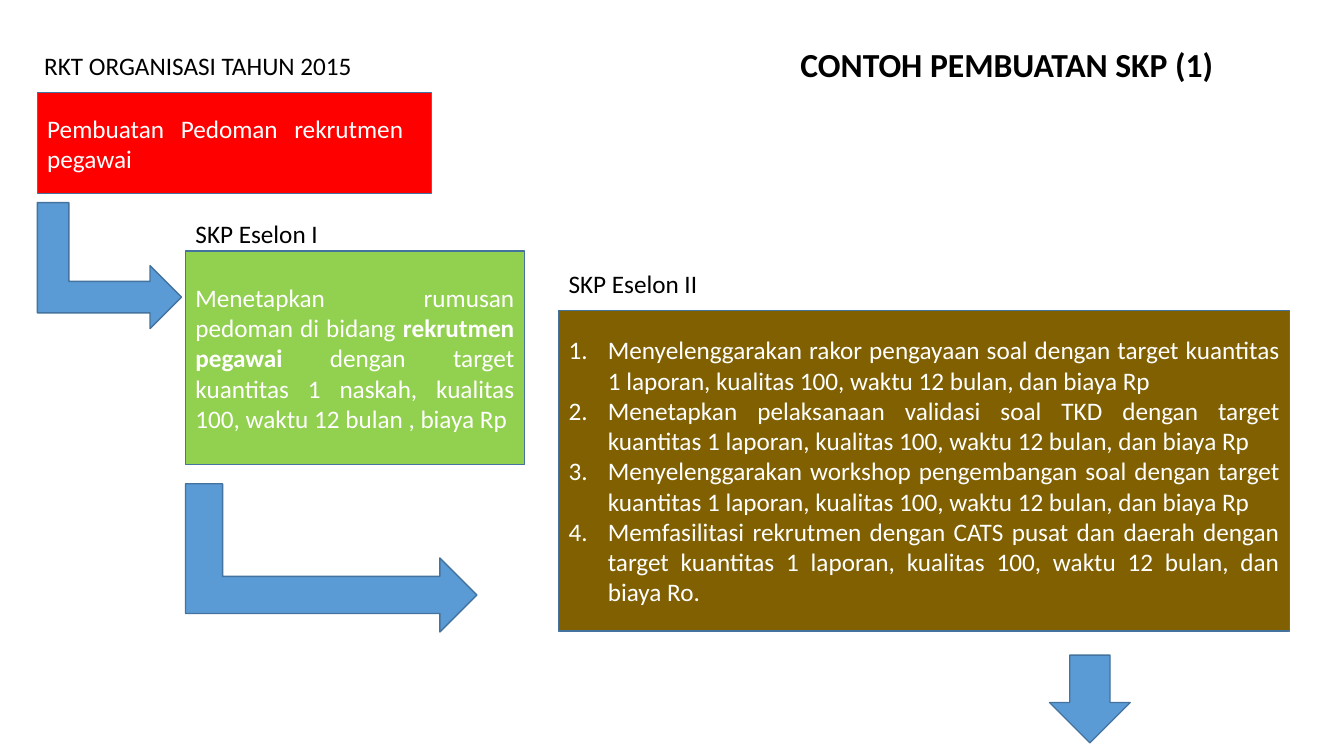
from lxml import etree
from pptx import Presentation
from pptx import util as u
from pptx.dml.color import RGBColor
from pptx.enum import shapes, text
from pptx.oxml.ns import qn

I = u.Inches
SHAPE = shapes.MSO_SHAPE
BLUE = "5B9BD5"
OUTLINE = "43739E"
TARGET = "target kuantitas 1 laporan, kualitas 100, waktu 12 bulan, dan biaya"
TASKS = [
    f"Menyelenggarakan rakor pengayaan soal dengan {TARGET} Rp",
    f"Menetapkan pelaksanaan validasi soal TKD dengan {TARGET} Rp",
    f"Menyelenggarakan workshop pengembangan soal dengan {TARGET} Rp",
    f"Memfasilitasi rekrutmen dengan CATS pusat dan daerah dengan {TARGET} Ro.",
]


def rgb(value):
    return RGBColor.from_string(value)


def add_run(p, content, size=18, color="000000", bold=False):
    r = p.add_run()
    r.text = content
    r.font.name = "Calibri"
    r.font.size = u.Pt(size)
    r.font.bold = bold
    r.font.color.rgb = rgb(color)


def number(p, indent=0.39):
    pPr = p._p.get_or_add_pPr()
    pPr.set("marL", str(I(indent)))
    pPr.set("indent", str(-I(indent)))
    etree.SubElement(pPr, qn("a:buFont"), typeface="+mj-lt")
    etree.SubElement(pPr, qn("a:buAutoNum"), type="arabicPeriod")


def add_label(s, box, content, **fmt):
    tf = s.shapes.add_textbox(*map(I, box)).text_frame
    tf.word_wrap = True
    add_run(tf.paragraphs[0], content, **fmt)


def add_figure(s, kind, box, fill, rotation=0):
    sp = s.shapes.add_shape(kind, *map(I, box))
    sp.shadow.inherit = False
    sp.rotation = rotation
    sp.fill.solid()
    sp.fill.fore_color.rgb = rgb(fill)
    sp.line.color.rgb = rgb(OUTLINE)
    sp.line.width = u.Pt(1)
    return sp


def add_panel(s, box, fill, paragraphs, numbered=False, right_inset=0.1):
    tf = add_figure(s, SHAPE.RECTANGLE, box, fill).text_frame
    tf.word_wrap = True
    tf.margin_right = I(right_inset)
    tf.vertical_anchor = text.MSO_ANCHOR.MIDDLE
    for i, runs in enumerate(paragraphs):
        p = tf.add_paragraph() if i else tf.paragraphs[0]
        p.alignment = text.PP_ALIGN.JUSTIFY
        if numbered:
            number(p)
        for content, bold in runs:
            add_run(p, content, color="FFFFFF", bold=bold)


def add_bent_arrow(s, box):
    x, y, w, h = box
    unrotated = (x + (w - h) / 2, y + (h - w) / 2, h, w)
    add_figure(s, SHAPE.BENT_UP_ARROW, unrotated, BLUE, 90)


def add_plan(s, x, y):
    add_label(s, (x - 0.03, y, 3.42, 0.4), "RKT ORGANISASI TAHUN 2015")
    add_panel(s, (x, y + 0.47, 3.91, 1), "FF0000",
              [[("Pembuatan Pedoman rekrutmen pegawai", False)]], right_inset=0.28)
    add_bent_arrow(s, (x, y + 1.56, 1.43, 1.25))


def add_echelon_one(s, x, y):
    add_panel(s, (x, y + 0.37, 3.36, 2.12), "92D050", [[
        ("Menetapkan rumusan pedoman di bidang ", False),
        ("rekrutmen pegawai", True),
        (" dengan target kuantitas 1 naskah, kualitas 100, waktu 12 bulan , biaya Rp", False),
    ]])
    add_label(s, (x, y, 3.32, 0.4), "SKP Eselon I")
    add_bent_arrow(s, (x, y + 2.68, 2.89, 1.47))


def add_echelon_two(s, x, y):
    add_label(s, (x, y, 7.08, 0.4), "SKP Eselon II")
    add_panel(s, (x, y + 0.47, 7.25, 3.18), "806000",
              [[(task, False)] for task in TASKS], numbered=True)
    add_figure(s, SHAPE.DOWN_ARROW, (x + 4.87, y + 3.89, 0.8, 0.87), BLUE)


def main():
    prs = Presentation()
    prs.slide_width, prs.slide_height = I(13.33), I(7.5)
    s = prs.slides.add_slide(prs.slide_layouts[6])
    add_label(s, (7.84, 0.39, 4.78, 0.5), "CONTOH PEMBUATAN SKP (1)", size=24, bold=True)
    add_plan(s, 0.37, 0.45)
    add_echelon_one(s, 1.84, 2.12)
    add_echelon_two(s, 5.54, 2.61)
    prs.save("out.pptx")


if __name__ == "__main__":
    main()
